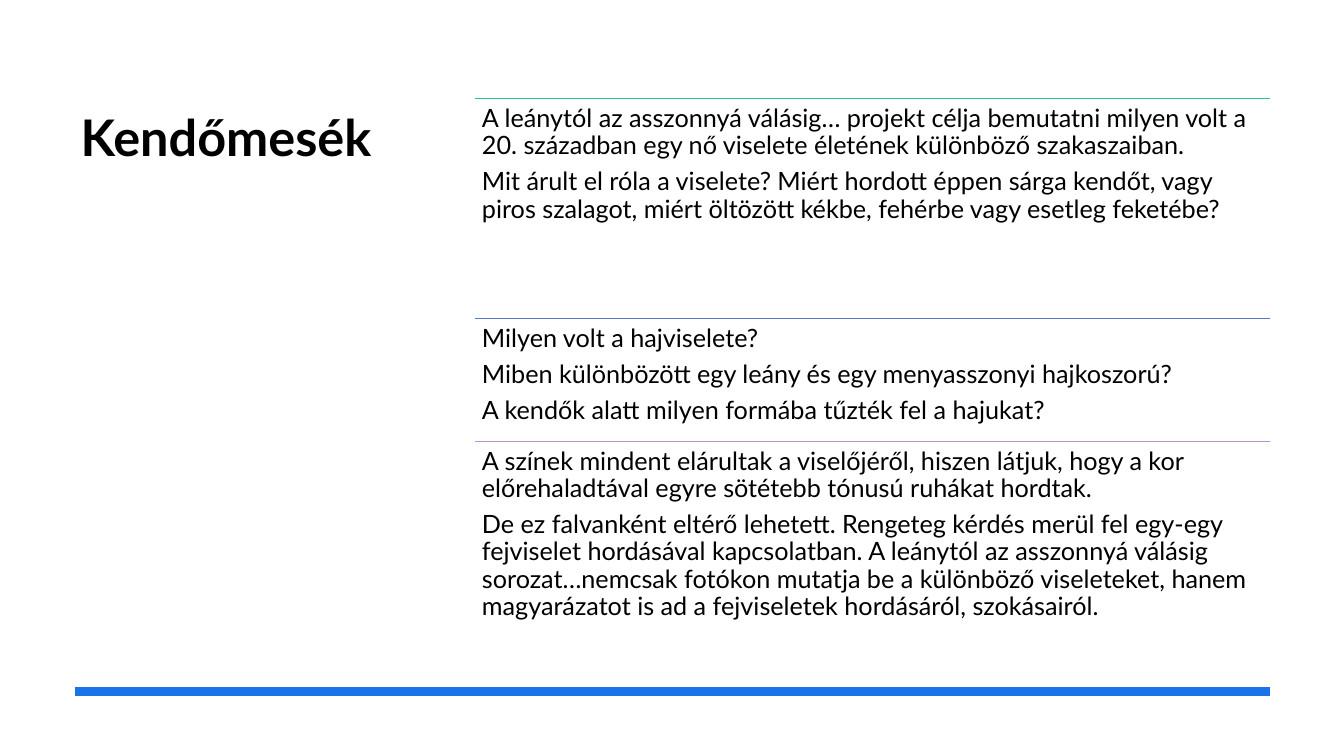
"""Build the Kendőmesék slide: a title beside three ruled text sections."""
import pptx
import pptx.util
import pptx.dml.color
import pptx.enum.shapes
import pptx.enum.text
import pptx.oxml.ns
import lxml.etree

Inches = pptx.util.Inches
Pt = pptx.util.Pt
RGBColor = pptx.dml.color.RGBColor

BLACK = RGBColor(0x00, 0x00, 0x00)
BLUE = RGBColor(0x19, 0x73, 0xEB)
GREEN = RGBColor(0x25, 0xC8, 0xA2)
INDIGO = RGBColor(0x57, 0x75, 0xCF)
PURPLE = RGBColor(0xBF, 0x8E, 0xD1)

SECTION_LEFT = 4.71
RIGHT_EDGE = 12.6
SECTIONS = [
    (0.98, 2.19, GREEN, [
        "A leánytól az asszonnyá válásig… projekt célja bemutatni milyen volt a 20. században egy nő viselete életének különböző szakaszaiban.",
        "Mit árult el róla a viselete? Miért hordott éppen sárga kendőt, vagy piros szalagot, miért öltözött kékbe, fehérbe vagy esetleg feketébe?",
    ]),
    (3.16, 1.21, INDIGO, [
        "Milyen volt a hajviselete?",
        "Miben különbözött egy leány és egy menyasszonyi hajkoszorú?",
        "A kendők alatt milyen formába tűzték fel a hajukat?",
    ]),
    (4.38, 2.19, PURPLE, [
        "A színek mindent elárultak a viselőjéről, hiszen látjuk, hogy a kor előrehaladtával egyre sötétebb tónusú ruhákat hordtak.",
        "De ez falvanként eltérő lehetett. Rengeteg kérdés merül fel egy-egy fejviselet hordásával kapcsolatban. A leánytól az asszonnyá válásig sorozat…nemcsak fotókon mutatja be a különböző viseleteket, hanem magyarázatot is ad a fejviseletek hordásáról, szokásairól.",
    ]),
]


def write_text(frame, paragraphs, size, bold=False, line_spacing=1.0, space_after=0, inset=None):
    frame.word_wrap = True
    frame.auto_size = pptx.enum.text.MSO_AUTO_SIZE.NONE
    frame.vertical_anchor = pptx.enum.text.MSO_ANCHOR.TOP
    if inset is not None:
        frame.margin_left = frame.margin_right = Inches(inset)
        frame.margin_top = frame.margin_bottom = Inches(inset)
    for index, text in enumerate(paragraphs):
        paragraph = frame.paragraphs[0] if index == 0 else frame.add_paragraph()
        paragraph.alignment = pptx.enum.text.PP_ALIGN.LEFT
        paragraph.line_spacing = line_spacing
        paragraph.space_before = Pt(0)
        paragraph.space_after = Pt(space_after)
        run = paragraph.add_run()
        run.text = text
        run.font.name = "Lato"
        run.font.size = Pt(size)
        run.font.bold = bold
        run.font.color.rgb = BLACK


def draw_rule(left, top, color, width):
    rule = slide.shapes.add_connector(
        pptx.enum.shapes.MSO_CONNECTOR.STRAIGHT,
        Inches(left), Inches(top), Inches(RIGHT_EDGE), Inches(top))
    rule.line.color.rgb = color
    rule.line.width = Pt(width)
    lxml.etree.SubElement(rule.element.spPr, pptx.oxml.ns.qn("a:effectLst"))


presentation = pptx.Presentation()
presentation.slide_width = Inches(13.33)
presentation.slide_height = Inches(7.5)
slide = presentation.slides.add_slide(presentation.slide_layouts[5])

title = slide.shapes.title
title.left, title.top = Inches(0.7), Inches(1)
title.width, title.height = Inches(3.28), Inches(4.55)
write_text(title.text_frame, ["Kendőmesék"], size=36, bold=True)

draw_rule(0.74, 6.86, BLUE, 6)

for top, height, color, paragraphs in SECTIONS:
    draw_rule(SECTION_LEFT, top, color, 1)
    section = slide.shapes.add_textbox(
        Inches(SECTION_LEFT), Inches(top),
        Inches(RIGHT_EDGE - SECTION_LEFT), Inches(height))
    write_text(section.text_frame, paragraphs, size=18,
               line_spacing=0.9, space_after=6.3, inset=0.07)

presentation.save("out.pptx")
